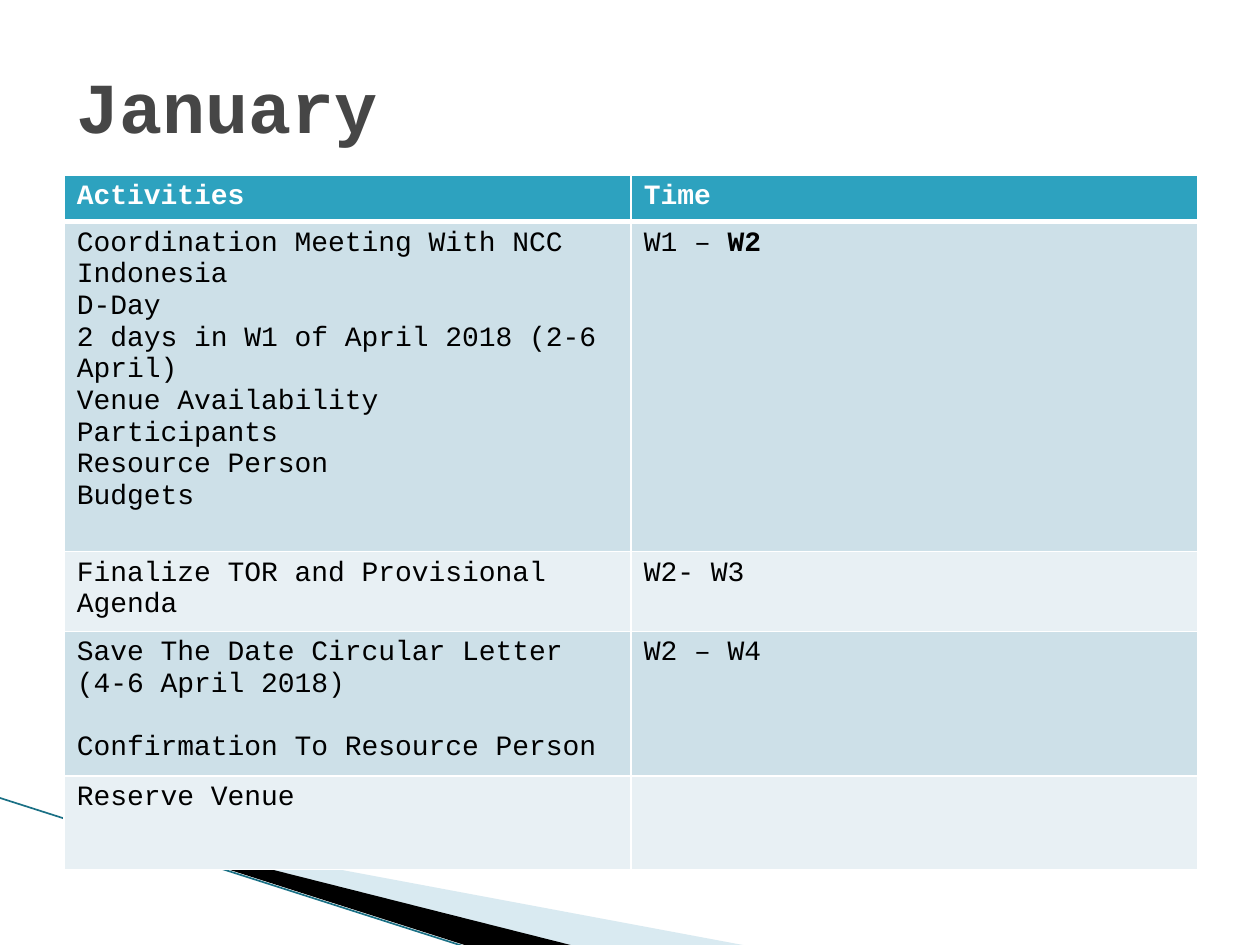
from lxml.etree import SubElement
from pptx import Presentation
from pptx.dml.color import RGBColor
from pptx.enum.text import MSO_ANCHOR
from pptx.oxml import parse_xml
from pptx.oxml.ns import nsdecls, qn
from pptx.util import Inches, Pt

COLORS = {
    "wedge": "A0CBDC", "black": "000000", "line": "1A7085",
    "title": "464646", "header": "2DA2BF", "white": "FFFFFF",
    "band_dark": "CDE0E8", "band_light": "E8F0F4",
}
WEDGE = [(0.55, 6.5), (5.95, 7.51), (4.56, 7.51)]
SHADE = [(0.53, 6.49), (4.57, 7.51), (3.72, 7.51)]

# Each cell is a list of paragraphs, each paragraph a list of (text, bold) runs.
HEADER = [[[("Activities", True)]], [[("Time", True)]]]
ACTIVITIES = [
    "Coordination Meeting With NCC Indonesia", "D-Day",
    "2 days in W1 of April 2018 (2-6 April)", "Venue Availability",
    "Participants", "Resource Person", "Budgets",
]
LETTERS = ["Save The Date Circular Letter (4-6 April 2018)",
           "Confirmation To Resource Person"]


def plain(*lines):
    return [[(line, False)] for line in lines]


ROWS = [
    HEADER,
    [plain(*ACTIVITIES), [[("W1 – ", False), ("W2", True)]]],
    [plain("Finalize TOR and Provisional Agenda"), plain("W2- W3")],
    [plain(*LETTERS), plain("W2 – W4")],
    [plain("Reserve Venue"), []],
]
ROW_HEIGHTS = [0.35, 2.62, 0.61, 1.1, 0.74]


def rgb(name):
    return RGBColor.from_string(COLORS[name])


class SlideBuilder:
    """Holds the font and the slide being drawn."""

    def __init__(self, slide, font="Courier New"):
        self.slide = slide
        self.font = font

    def run(self, p, text, size, color, bold=False):
        r = p.add_run()
        r.text = text
        style = {"name": self.font, "size": Pt(size), "bold": bold}
        for key, value in style.items():
            setattr(r.font, key, value)
        r.font.color.rgb = rgb(color)

    def polygon(self, points, color, opacity=100):
        points = [(Inches(x), Inches(y)) for x, y in points]
        fb = self.slide.shapes.build_freeform(*points[0])
        fb.add_line_segments(points[1:], close=True)
        sp = fb.convert_to_shape()
        sp.shadow.inherit = False
        sp.line.fill.background()
        sp.fill.solid()
        sp.fill.fore_color.rgb = rgb(color)
        if opacity < 100:
            clr = sp.fill._xPr.find(qn("a:solidFill"))[0]
            SubElement(clr, qn("a:alpha")).set("val", str(opacity * 1000))

    def line(self, start, end, color, width):
        ends = [Inches(v) for v in (*start, *end)]
        cxn = self.slide.shapes.add_connector(1, *ends)
        cxn.line.color.rgb = rgb(color)
        cxn.line.width = Pt(width)
        SubElement(cxn._element.spPr, qn("a:effectLst"))

    def title(self, text, box, size):
        tf = self.slide.shapes.add_textbox(*map(Inches, box)).text_frame
        tf.word_wrap = True
        tf.vertical_anchor = MSO_ANCHOR.MIDDLE
        self.run(tf.paragraphs[0], text, size, "title", bold=True)

    def borders(self, cell, bottom):
        tcPr = cell._tc.get_or_add_tcPr()
        widths = {"lnL": 1, "lnR": 1, "lnT": 1, "lnB": bottom}
        for i, (tag, width) in enumerate(widths.items()):
            tcPr.insert(i, parse_xml(
                f'<a:{tag} {nsdecls("a")} w="{Pt(width)}"><a:solidFill>'
                f'<a:srgbClr val="{COLORS["white"]}"/></a:solidFill></a:{tag}>'))

    def cell(self, cell, paragraphs, fill, color, bottom, gap):
        cell.fill.solid()
        cell.fill.fore_color.rgb = rgb(fill)
        self.borders(cell, bottom)
        tf = cell.text_frame
        for i, runs in enumerate(paragraphs):
            p = tf.add_paragraph() if i else tf.paragraphs[0]
            if i and gap:
                p.space_before = Pt(gap)
            for text, bold in runs:
                self.run(p, text, 16, color, bold)

    def table(self, rows, heights, left, top, width):
        cols = len(rows[0])
        table = self.slide.shapes.add_table(
            len(rows), cols, Inches(left), Inches(top),
            Inches(width), Inches(sum(heights))).table
        table.horz_banding = False
        for col in table.columns:
            col.width = Inches(width / cols)
        for i, (row, height) in enumerate(zip(rows, heights)):
            table.rows[i].height = Inches(height)
            band = "band_dark" if i % 2 else "band_light"
            fill, color, bottom = (band, "black", 1) if i else ("header", "white", 3)
            gap = 18 if row[0] == plain(*LETTERS) else 0
            for j, paragraphs in enumerate(row):
                self.cell(table.cell(i, j), paragraphs, fill, color, bottom, gap)


def main():
    prs = Presentation()
    prs.slide_width, prs.slide_height = Inches(10), Inches(7.5)
    s = SlideBuilder(prs.slides.add_slide(prs.slide_layouts[6]))
    s.polygon(WEDGE, "wedge", opacity=40)
    s.polygon(SHADE, "black")
    s.line((-0.01, 6.33), (3.71, 7.52), "line", 0.95)
    s.title("January", (0.51, 0.21, 9, 1.25), 41)
    s.table(ROWS, ROW_HEIGHTS, 0.51, 1.39, 9)
    prs.save("out.pptx")


if __name__ == "__main__":
    main()
